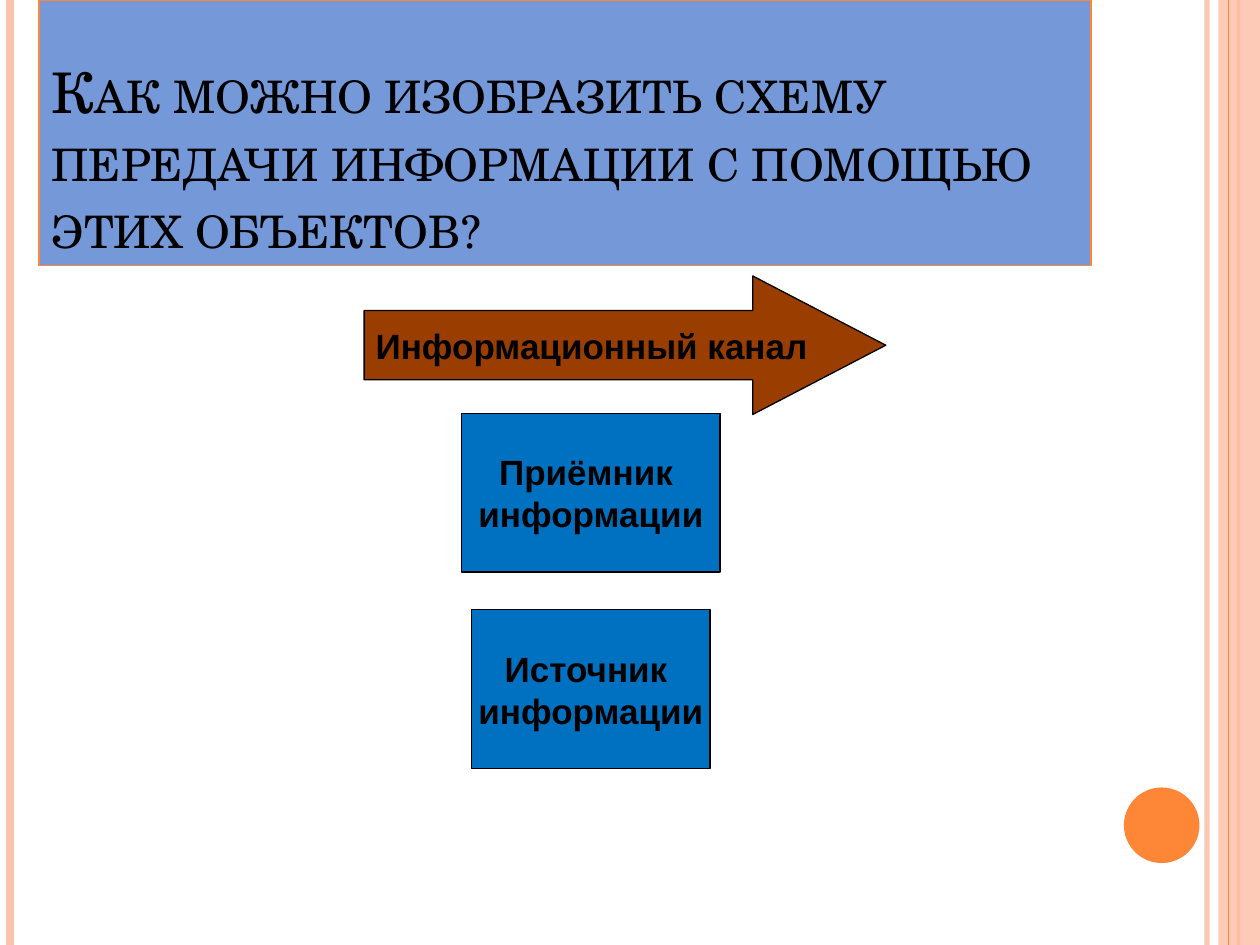
from pptx import Presentation
from pptx.dml.color import RGBColor
from pptx.enum.shapes import MSO_CONNECTOR as Conn, MSO_SHAPE as Kind
from pptx.enum.text import MSO_ANCHOR as Anchor, MSO_AUTO_SIZE as Fit, PP_ALIGN as Align
from pptx.oxml.ns import qn
from pptx.util import Inches, Pt
from lxml.etree import SubElement

COLORS = {
    "peach": "FEC3AE", "orange": "FE8637", "title": "7598D9",
    "blue": "0070C0", "brown": "9A3D01", "black": "000000",
}


def rgb(name):
    return RGBColor.from_string(COLORS[name])


def fade(format_xml, percent):
    """Make a solid colour partly transparent."""
    color = next(format_xml.iter(qn("a:srgbClr")))
    SubElement(color, qn("a:alpha"), val=str(percent * 1000))


def paint(shape, fill, line=None):
    shape.shadow.inherit = False
    shape.fill.solid()
    shape.fill.fore_color.rgb = rgb(fill)
    if line:
        shape.line.color.rgb = rgb(line)
        shape.line.width = Pt(0.75)
    else:
        shape.line.fill.background()


def add_shape(slide, kind, box, fill, line=None):
    shape = slide.shapes.add_shape(kind, *map(Inches, box))
    paint(shape, fill, line)
    return shape


def add_stripe(slide, x, top, height, color, width, alpha=100):
    stripe = slide.shapes.add_connector(
        Conn.STRAIGHT, Inches(x), Inches(top), Inches(x), Inches(top + height))
    stripe.line.color.rgb = rgb(color)
    stripe.line.width = Pt(width)
    props = stripe._element.spPr
    SubElement(props, qn("a:effectLst"))
    if alpha < 100:
        fade(props, alpha)


def add_decor(slide, box):
    left, top, width, height = box
    right = left + width
    add_stripe(slide, right - 0.42, top, height, "peach", 3, 93)
    add_stripe(slide, left + 0.08, top, height, "peach", 4.5)
    add_stripe(slide, right - 0.17, top, height, "orange", 1.5)
    band = add_shape(slide, Kind.RECTANGLE, (right - 0.33, top, 0.33, height), "peach")
    fade(band._element.spPr, 87)
    add_stripe(slide, right - 0.25, top, height, "orange", 0.75)
    add_shape(slide, Kind.OVAL, (right - 1.08, top + 6.25, 0.6, 0.6), "orange")


def add_title(slide, box, text):
    title = slide.shapes.title
    title.left, title.top, title.width, title.height = map(Inches, box)
    paint(title, "title", "orange")
    frame = title.text_frame
    frame.text = text
    frame.word_wrap = True
    frame.auto_size = Fit.NONE
    frame.vertical_anchor = Anchor.BOTTOM
    para = frame.paragraphs[0]
    para.alignment = Align.LEFT
    font = para.runs[0].font
    font.name = "TeX Gyre Schola"
    font.size = Pt(32)
    font.color.rgb = rgb("black")
    font._element.set("cap", "small")


def add_node(slide, kind, box, fill, lines):
    node = add_shape(slide, kind, box, fill, "black")
    frame = node.text_frame
    frame.text = "\n".join(lines)
    frame.word_wrap = False
    frame.vertical_anchor = Anchor.MIDDLE
    for para in frame.paragraphs:
        para.alignment = Align.CENTER
        para.font.name = "Arial"
        para.font.size = Pt(20)
        para.font.bold = True
        para.font.color.rgb = rgb("black")
    return node


def add_scheme(slide, box):
    """Channel arrow with the two ends of the link centred below it."""
    left, top, width, height = box
    ends = [("Источник ", 1.89, top + height - 1.26), ("Приёмник ", 2.05, top + 1.09)]
    middle = left + 1.8
    for name, wide, y in ends:
        add_node(slide, Kind.RECTANGLE, (middle - wide / 2, y, wide, 1.26),
                 "blue", [name, "информации"])
    arrow = add_node(slide, Kind.RIGHT_ARROW, (left, top, width, 1.1),
                     "brown", ["Информационный канал"])
    arrow.adjustments[0] = 0.5
    arrow.adjustments[1] = 0.96


def main():
    deck = Presentation()
    deck.slide_width, deck.slide_height = Inches(10), Inches(7.5)
    slide = deck.slides.add_slide(deck.slide_layouts[5])
    add_decor(slide, (0, 0, 10, 7.5))
    add_title(slide, (0.31, 0, 8.35, 2.11),
              "Как можно изобразить схему передачи информации с помощью этих объектов?")
    add_scheme(slide, (2.89, 2.19, 4.14, 3.91))
    deck.save("out.pptx")


if __name__ == "__main__":
    main()
